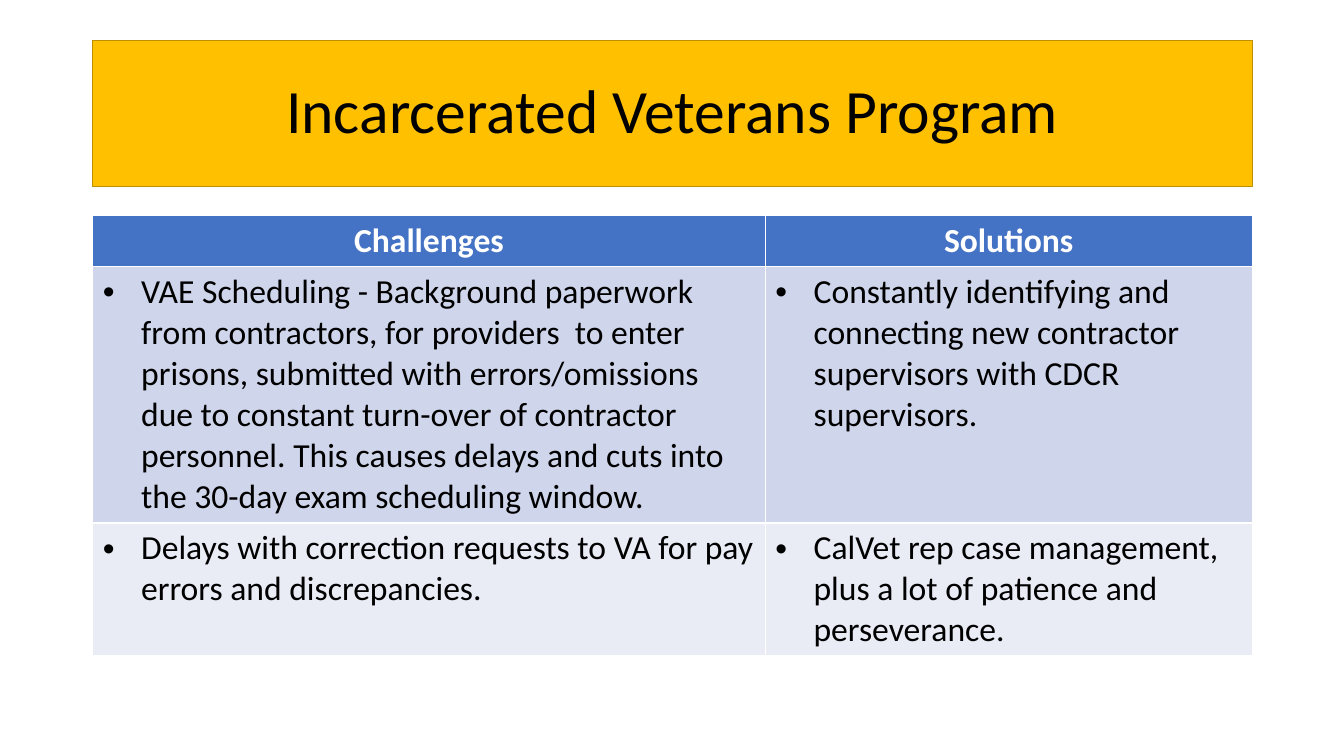
from pptx import Presentation
from pptx.dml.color import RGBColor
from pptx.enum.text import MSO_ANCHOR, PP_ALIGN
from pptx.oxml.ns import qn
from pptx.util import Inches, Pt
from lxml.etree import SubElement

FONT = "Calibri"
COLORS = {
    "gold": "FFC000",
    "gold_line": "BD8E00",
    "header": "4472C4",
    "band_dark": "CFD5EA",
    "band_light": "E9EBF5",
    "black": "000000",
    "white": "FFFFFF",
}
LEFT, WIDTH = 0.92, 11.5
COLUMN_WIDTHS = [6.67, 4.83]
ROW_HEIGHTS = [0.5, 2.54, 1.32]
ROW_FILLS = ["header", "band_dark", "band_light"]
ROWS = [
    ("Challenges", "Solutions"),
    (
        "VAE Scheduling - Background paperwork from contractors, for providers  to enter "
        "prisons, submitted with errors/omissions due to constant turn-over of contractor "
        "personnel. This causes delays and cuts into the 30-day exam scheduling window.",
        "Constantly identifying and connecting new contractor supervisors with CDCR supervisors.",
    ),
    (
        "Delays with correction requests to VA for pay errors and discrepancies.",
        "CalVet rep case management, plus a lot of patience and perseverance.",
    ),
]


def color(name):
    return RGBColor.from_string(COLORS[name])


def paint(target, name):
    target.fill.solid()
    target.fill.fore_color.rgb = color(name)


def style_font(para, size, color_name, bold=False):
    para.font.name = FONT
    para.font.size = Pt(size)
    para.font.bold = bold
    para.font.color.rgb = color(color_name)


def add_bullet(para):
    properties = para._p.get_or_add_pPr()
    properties.set("marL", str(Inches(0.38)))
    properties.set("indent", str(Inches(-0.38)))
    SubElement(properties, qn("a:buFont"), typeface="Arial")
    SubElement(properties, qn("a:buChar"), char="•")


def set_title(page, text):
    title = page.shapes.title
    title.left, title.top = Inches(LEFT), Inches(0.4)
    title.width, title.height = Inches(WIDTH), Inches(1.45)
    paint(title, "gold")
    title.line.color.rgb = color("gold_line")
    title.line.width = Pt(1)
    title.text_frame.text = text
    title.text_frame.vertical_anchor = MSO_ANCHOR.MIDDLE
    para = title.text_frame.paragraphs[0]
    para.alignment = PP_ALIGN.CENTER
    para.line_spacing = 0.9
    style_font(para, 44, "black")


def fill_cell(cell, text, fill, is_header):
    paint(cell, fill)
    cell.text = text
    para = cell.text_frame.paragraphs[0]
    if is_header:
        para.alignment = PP_ALIGN.CENTER
        style_font(para, 24, "white", bold=True)
    else:
        add_bullet(para)
        style_font(para, 24, "black")


def add_program_table(page):
    frame = page.shapes.add_table(
        len(ROWS), len(COLUMN_WIDTHS), Inches(LEFT), Inches(2.14),
        Inches(WIDTH), Inches(sum(ROW_HEIGHTS)),
    )
    table = frame.table
    for column, width in zip(table.columns, COLUMN_WIDTHS):
        column.width = Inches(width)
    for index, texts in enumerate(ROWS):
        table.rows[index].height = Inches(ROW_HEIGHTS[index])
        for cell, text in zip(table.rows[index].cells, texts):
            fill_cell(cell, text, ROW_FILLS[index], index == 0)


def main():
    deck = Presentation()
    deck.slide_width, deck.slide_height = Inches(13.33), Inches(7.5)
    page = deck.slides.add_slide(deck.slide_layouts[5])
    set_title(page, "Incarcerated Veterans Program")
    add_program_table(page)
    deck.save("out.pptx")


if __name__ == "__main__":
    main()
